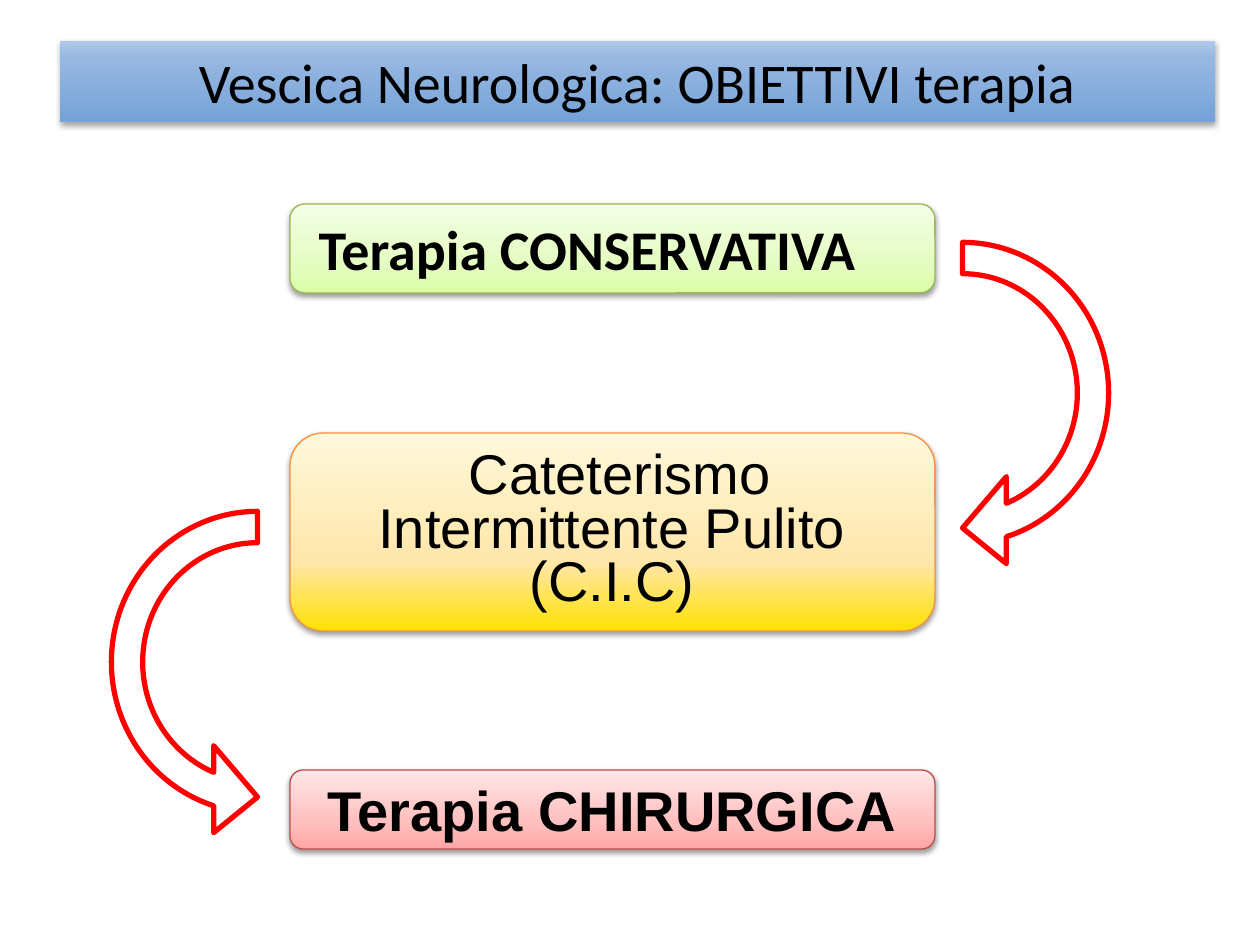
from copy import deepcopy
from lxml.etree import SubElement
from pptx import Presentation
from pptx.dml.color import RGBColor
from pptx.enum.shapes import MSO_SHAPE
from pptx.enum.text import MSO_ANCHOR, MSO_AUTO_SIZE, PP_ALIGN
from pptx.oxml.ns import qn
from pptx.util import Pt

THEME = {
    "text": "000000", "arrow": "FF0000", "paper": "FFFFFF", "shade": "000000",
    "size": 32, "thin": 0.75, "thick": 3, "before": 6,
    "blue": ((0, "76A2D8"), (80, "97B8E1"), (100, "B0CAEA")),
    "green": ((0, "DAFDA7"), (35, "E4FCC2"), (100, "F5FFE7")),
    "gold": ((0, "FFE101"), (35, "FFE7AB"), (100, "FFF8DB")),
    "rose": ((0, "FFA6A5"), (35, "FFC0BF"), (100, "FFE7E7")),
}
TITLE = ("Vescica Neurologica: OBIETTIVI terapia", (60, 41, 1155, 81))
LEFT, WIDTH, INSET = 290, 645, 13
STEPS = [
    {"text": "Terapia CONSERVATIVA", "top": 204, "high": 89, "fill": "green",
     "line": "98B955", "font": "Calibri", "bold": True, "right": 50},
    {"text": " Cateterismo Intermittente Pulito (C.I.C)", "top": 433, "high": 198,
     "fill": "gold", "line": "F69240", "font": "Arial", "bold": False,
     "space": 0.8},
    {"text": "Terapia CHIRURGICA", "top": 770, "high": 79, "fill": "rose",
     "line": "BF4C48", "font": "Arial", "bold": True},
]
ARROWS = [(784, 219, 90, False), (79, 488, 270, True)]
SPAN = (357, 348)
BEND = (0.09, 11.42, 204.58, 108, 0.125)


def px(num):
    return round(num * 914400 / 126)


def tint(name):
    return RGBColor.from_string(THEME.get(name, name))


def grade(shape, name):
    shape.fill.gradient()
    shape.fill.gradient_angle = 90
    stops = shape._element.spPr.find(qn("a:gradFill")).find(qn("a:gsLst"))
    stops.append(deepcopy(stops[-1]))
    for stop, (place, color) in zip(shape.fill.gradient_stops, THEME[name]):
        stop.position = place / 100
        stop.color.rgb = tint(color)


def shade(shape, alpha):
    shape.shadow.inherit = False
    base = shape._element.spPr.find(qn("a:effectLst"))
    drop = SubElement(base, qn("a:outerShdw"), blurRad=str(Pt(3.1)),
                      dist=str(Pt(1.6)), dir="5400000", rotWithShape="0")
    color = SubElement(drop, qn("a:srgbClr"), val=THEME["shade"])
    SubElement(color, qn("a:alpha"), val=str(alpha * 1000))


def write(shape, text, font, bold=False):
    frame = shape.text_frame
    frame.word_wrap = True
    frame.auto_size = MSO_AUTO_SIZE.NONE
    frame.vertical_anchor = MSO_ANCHOR.MIDDLE
    para = frame.paragraphs[0]
    para.alignment = PP_ALIGN.CENTER
    run = para.add_run()
    run.text = text
    run.font.name = font
    run.font.size = Pt(THEME["size"])
    run.font.bold = bold
    run.font.color.rgb = tint("text")
    return frame, para


def outline(shape, color, width):
    shape.line.color.rgb = tint(color)
    shape.line.width = Pt(THEME[width])


def head(slide):
    text, box = TITLE
    bar = slide.shapes.title
    bar.left, bar.top, bar.width, bar.height = map(px, box)
    grade(bar, "blue")
    shade(bar, 35)
    write(bar, text, "Calibri")


def panel(slide, step):
    box = map(px, (LEFT, step["top"], WIDTH, step["high"]))
    shape = slide.shapes.add_shape(MSO_SHAPE.ROUNDED_RECTANGLE, *box)
    grade(shape, step["fill"])
    outline(shape, step["line"], "thin")
    shade(shape, 38)
    frame, para = write(shape, step["text"], step["font"], step["bold"])
    frame.margin_right = px(INSET + step.get("right", 0))
    para.space_before = Pt(THEME["before"])
    para.line_spacing = step.get("space", 1.0)


def arrow(slide, left, top, turn, flip):
    shape = slide.shapes.add_shape(MSO_SHAPE.CIRCULAR_ARROW,
                                   *map(px, (left, top, *SPAN)))
    for spot, bend in enumerate(BEND):
        shape.adjustments[spot] = bend
    shape.rotation = turn
    if flip:
        shape._element.spPr.find(qn("a:xfrm")).set("flipH", "1")
    shape.fill.solid()
    shape.fill.fore_color.rgb = tint("paper")
    outline(shape, "arrow", "thick")
    shape.shadow.inherit = False


def main():
    deck = Presentation()
    deck.slide_width, deck.slide_height = px(1260), px(945)
    slide = deck.slides.add_slide(deck.slide_layouts[5])
    head(slide)
    for step in STEPS:
        panel(slide, step)
    for item in ARROWS:
        arrow(slide, *item)
    deck.save("out.pptx")


if __name__ == "__main__":
    main()
